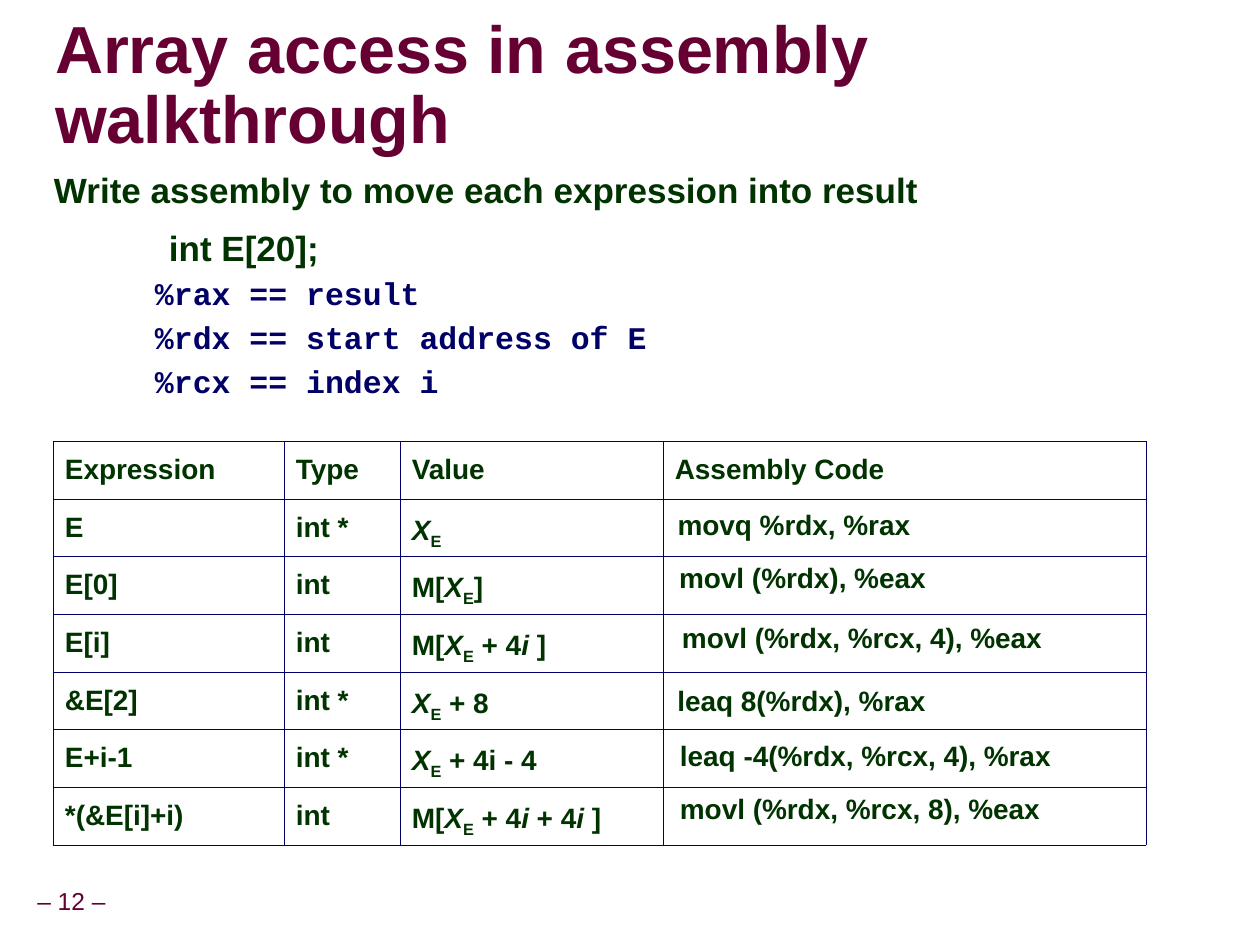
from lxml import etree
from pptx import Presentation
from pptx.dml.color import RGBColor
from pptx.enum.text import MSO_ANCHOR, MSO_AUTO_SIZE, PP_ALIGN
from pptx.oxml.ns import qn
from pptx.util import Emu, Pt

LEFT, CENTER = PP_ALIGN.LEFT, PP_ALIGN.CENTER
MIDDLE, TOP = MSO_ANCHOR.MIDDLE, MSO_ANCHOR.TOP
NO_FIT, GROW = MSO_AUTO_SIZE.NONE, MSO_AUTO_SIZE.SHAPE_TO_FIT_TEXT

PX_PER_INCH = 126
MAROON, GREEN, NAVY = "660033", "003300", "000066"
ITALIC, SUB = "italic", "subscript"
ARRAY_START = [("X", ITALIC), ("E", SUB)]

HEADERS = ["Expression", "Type", "Value", "Assembly Code"]
EXPRESSIONS = [
    ("E", "int *", ARRAY_START),
    ("E[0]", "int", [("M[", ""), *ARRAY_START, ("]", "")]),
    ("E[i]", "int", [("M[", ""), *ARRAY_START, (" + 4", ""), ("i ", ITALIC), ("]", "")]),
    ("&E[2]", "int *", [*ARRAY_START, (" + 8", "")]),
    ("E+i-1", "int *", [*ARRAY_START, (" + 4i - 4", "")]),
    ("*(&E[i]+i)", "int", [("M[", ""), *ARRAY_START, (" + 4", ""), ("i", ITALIC),
                           (" + 4", ""), ("i ", ITALIC), ("]", "")]),
]
ANSWERS = [
    ("movq %rdx, %rax", 670, 504, 248),
    ("movl (%rdx), %eax", 671, 557, 263),
    ("movl (%rdx, %rcx, 4), %eax", 671, 617, 382),
    ("leaq 8(%rdx), %rax", 665, 680, 273),
    ("leaq -4(%rdx, %rcx, 4), %rax", 664, 735, 403),
    ("movl (%rdx, %rcx, 8), %eax", 669, 788, 382),
]
# text, level, left margin, first-line indent, colour, font, size, line spacing, space before
BODY_LINES = [
    ("Write assembly to move each expression into result",
     0, 53, -52, GREEN, "Arial", 20, 0.85, 12.5),
    ("int E[20];", 0, 116, 0, GREEN, "Arial", 20, 0.85, 12.5),
] + [(text, 1, 102, 0, NAVY, "Courier New", 18, 0.9, 5.6) for text in
     ("%rax == result", "%rdx == start address of E", "%rcx == index i")]


def px(length):
    return Emu(round(length * 914400 / PX_PER_INCH))


def color(value):
    return RGBColor.from_string(value)


class SlideBuilder:
    def __init__(self, presentation):
        self.slide = presentation.slides.add_slide(presentation.slide_layouts[1])

    def place(self, shape, left, top, width, height):
        shape.left, shape.top = px(left), px(top)
        shape.width, shape.height = px(width), px(height)

    def frame(self, frame, margins, anchor, fit, wrap):
        """Set the margins (left/right, top/bottom) and the layout of a text frame."""
        frame.margin_left = frame.margin_right = px(margins[0])
        frame.margin_top = frame.margin_bottom = px(margins[1])
        frame.vertical_anchor, frame.auto_size, frame.word_wrap = anchor, fit, wrap

    def paragraph(self, paragraph, size, fill, line_spacing, space_before=0,
                  bold=True, font="Arial", align=LEFT):
        paragraph.alignment = align
        paragraph.line_spacing = line_spacing
        paragraph.space_before = Pt(space_before)
        for run in paragraph.runs:
            run.font.name, run.font.size, run.font.bold = font, Pt(size), bold
            run.font.color.rgb = color(fill)

    def title(self, text, *box):
        title = self.slide.shapes.title
        self.place(title, *box)
        title.text_frame.text = text
        self.frame(title.text_frame, (0, 0), MIDDLE, NO_FIT, True)
        self.paragraph(title.text_frame.paragraphs[0], 38, MAROON, 0.87)

    def body(self, lines, *box):
        body = self.slide.placeholders[1]
        self.place(body, *box)
        frame = body.text_frame
        frame.text = "\n".join(line[0] for line in lines)
        self.frame(frame, (13, 6), TOP, NO_FIT, True)
        for paragraph, line in zip(frame.paragraphs, lines):
            _, level, margin, indent, fill, font, size, spacing, before = line
            paragraph.level = level
            self.paragraph(paragraph, size, fill, spacing, before, font=font)
            properties = paragraph._p.get_or_add_pPr()
            properties.set("marL", str(px(margin)))
            properties.set("indent", str(px(indent)))
            etree.SubElement(properties, qn("a:buNone"))

    def label(self, text, box, size, fill, **style):
        label = self.slide.shapes.add_textbox(*map(px, box))
        label.text_frame.text = text
        self.frame(label.text_frame, (6, 6), style.pop("anchor", TOP), GROW, False)
        self.paragraph(label.text_frame.paragraphs[0], size, fill, align=CENTER, **style)

    def borders(self, cell):
        properties = cell._tc.get_or_add_tcPr()
        for position, side in enumerate(("lnL", "lnR", "lnT", "lnB")):
            line = etree.Element(qn(f"a:{side}"), w="762")
            fill = etree.SubElement(line, qn("a:solidFill"))
            etree.SubElement(fill, qn("a:srgbClr"), val=NAVY)
            properties.insert(position, line)

    def cell(self, cell, content):
        """Fill a cell with plain text or a list of (text, style) pieces."""
        cell.fill.background()
        self.borders(cell)
        if not content:
            return
        cell.margin_left = cell.margin_right = px(12)
        cell.margin_top, cell.margin_bottom = px(18), px(6)
        paragraph = cell.text_frame.paragraphs[0]
        pieces = [(content, "")] if isinstance(content, str) else content
        for text, style in pieces:
            run = paragraph.add_run()
            run.text = text
            if style == ITALIC:
                run.font.italic = True
            elif style == SUB:
                run.font._element.set("baseline", "-25000")
        self.paragraph(paragraph, 16, GREEN, 0.82, 10)

    def table(self, rows, widths, left, top, height):
        table = self.slide.shapes.add_table(
            len(rows), len(widths), px(left), px(top), px(sum(widths)), px(height)).table
        table.first_row = table.horz_banding = False
        for column, width in zip(table.columns, widths):
            column.width = px(width)
        for row_index, row in enumerate(rows):
            table.rows[row_index].height = px(height / len(rows))
            for column_index, content in enumerate(row):
                self.cell(table.cell(row_index, column_index), content)


def main():
    presentation = Presentation()
    presentation.slide_width, presentation.slide_height = px(1260), px(945)
    builder = SlideBuilder(presentation)
    builder.title("Array access in assembly walkthrough", 55, 34, 1201, 107)
    builder.body(BODY_LINES, 40, 169, 1144, 719)
    builder.label("– 12 –", (-11, 881, 165, 43), 14, MAROON,
                  line_spacing=0.9, bold=False, anchor=MIDDLE)
    rows = [HEADERS] + [(*expression, "") for expression in EXPRESSIONS]
    builder.table(rows, [231, 116, 263, 483], 53, 441, 404)
    for text, left, top, width in ANSWERS:
        builder.label(text, (left, top, width, 46), 16, GREEN,
                      line_spacing=0.95, space_before=10)
    presentation.save("out.pptx")


if __name__ == "__main__":
    main()
